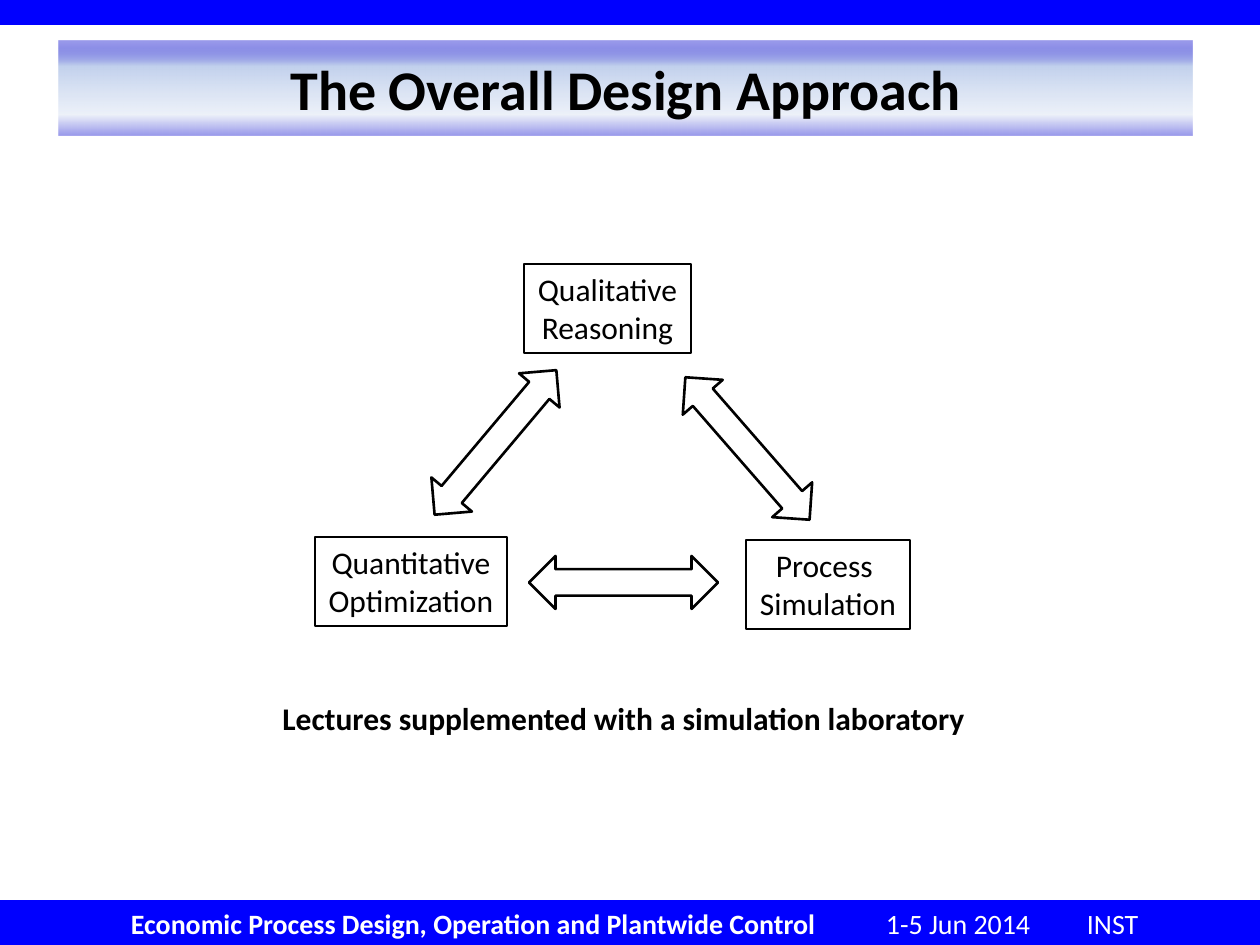
"""Build the design approach slide."""
from lxml import etree
from pptx import Presentation
from pptx.dml.color import RGBColor
from pptx.enum.shapes import MSO_SHAPE
from pptx.enum.text import MSO_ANCHOR, MSO_AUTO_SIZE, PP_ALIGN
from pptx.oxml import parse_xml
from pptx.oxml.ns import qn
from pptx.util import Pt

RECT, ARROW = MSO_SHAPE.RECTANGLE, MSO_SHAPE.UP_DOWN_ARROW
TOP, MIDDLE = MSO_ANCHOR.TOP, MSO_ANCHOR.MIDDLE
LEFT, CENTER = PP_ALIGN.LEFT, PP_ALIGN.CENTER
GROW = MSO_AUTO_SIZE.SHAPE_TO_FIT_TEXT
BLUE = RGBColor(0x00, 0x00, 0xFF)
BLACK = RGBColor(0x00, 0x00, 0x00)
WHITE = RGBColor(0xFF, 0xFF, 0xFF)
NAVY = RGBColor(0x00, 0x00, 0xCC)
SKY = RGBColor(0xC2, 0xD1, 0xED)
PALE = RGBColor(0xD2, 0xDD, 0xF1)
STOPS = [(1, NAVY, 39), (27, SKY, 100), (78, PALE, 40), (100, NAVY, 40)]
SPACE = "http://schemas.openxmlformats.org/drawingml/2006/main"


def emu(px):
    return round(px * 914400 / 126)


class Deck:
    def __init__(self, font):
        self.font = font
        self.prs = Presentation()
        self.prs.slide_width, self.prs.slide_height = emu(1260), emu(945)
        self.slide = self.prs.slides.add_slide(self.prs.slide_layouts[6])

    def shape(self, kind, area, fill=None, line=None):
        item = self.slide.shapes.add_shape(kind, *map(emu, area))
        item.shadow.inherit = False
        if fill is None:
            item.fill.background()
        else:
            item.fill.solid()
            item.fill.fore_color.rgb = fill
        if line is None:
            item.line.fill.background()
        else:
            item.line.color.rgb = BLACK
            item.line.width = Pt(line)
        return item

    def fill_text(self, item, text, size, color=BLACK, bold=False,
                  align=CENTER, anchor=TOP, wrap=True):
        frame = item.text_frame
        frame.text = text
        frame.word_wrap = wrap
        frame.vertical_anchor = anchor
        if not wrap:
            frame.auto_size = GROW
        for para in frame.paragraphs:
            para.alignment = align
            for run in para.runs:
                self.style(run, size, color, bold)
        return frame

    def style(self, run, size, color, bold):
        run.font.name = self.font
        run.font.size = Pt(size)
        run.font.bold = bold
        run.font.color.rgb = color

    def title(self, area, text):
        item = self.shape(RECT, area, NAVY)
        stops = "".join(
            f'<a:gs pos="{pos * 1000}"><a:srgbClr val="{color}">'
            f'<a:alpha val="{alpha * 1000}"/></a:srgbClr></a:gs>'
            for pos, color, alpha in STOPS)
        grad = parse_xml(
            f'<a:gradFill xmlns:a="{SPACE}" rotWithShape="1">'
            f'<a:gsLst>{stops}</a:gsLst>'
            '<a:lin ang="5400000" scaled="0"/></a:gradFill>')
        props = item.element.spPr
        props.replace(props.find(qn("a:solidFill")), grad)
        self.fill_text(item, text, 32, bold=True, anchor=MIDDLE)

    def footer(self, area, start, name, notes):
        item = self.shape(RECT, area, BLUE)
        frame = self.fill_text(item, name, 16, WHITE, True, LEFT)
        frame.margin_left = emu(start)
        para = frame.paragraphs[0]
        tabs = etree.SubElement(para._p.get_or_add_pPr(), qn("a:tabLst"))
        for left, text in notes:
            etree.SubElement(tabs, qn("a:tab"), pos=str(emu(left - start)),
                             algn="l")
            run = para.add_run()
            run.text = "\t" + text
            self.style(run, 16, WHITE, False)

    def box(self, area, text):
        item = self.shape(RECT, area, line=0.75)
        self.fill_text(item, text, 18, wrap=False)

    def arrow(self, left, top, angle):
        self.shape(ARROW, (left, top, 53, 189), line=1.5).rotation = angle

    def label(self, area, text):
        item = self.slide.shapes.add_textbox(*map(emu, area))
        frame = self.fill_text(item, text, 18, bold=True, align=LEFT,
                               wrap=False)
        frame.paragraphs[0].space_after = Pt(12)


def main():
    deck = Deck("Calibri")
    deck.shape(RECT, (0, 0, 1260, 25), BLUE)
    deck.footer((0, 900, 1260, 45), 131,
                "Economic Process Design, Operation and Plantwide Control",
                [(886, "1-5 Jun 2014"), (1087, "INST")])
    deck.title((59, 41, 1134, 95), "The Overall Design Approach")
    for left, top, width, text in [
            (524, 264, 167, "Qualitative\nReasoning"),
            (746, 540, 164, "Process \nSimulation"),
            (315, 537, 192, "Quantitative\nOptimization")]:
        deck.box((left, top, width, 89), text)
    for left, top, angle in [(721, 354, 318.9), (597, 488, 90),
                             (469, 348, 40.1)]:
        deck.arrow(left, top, angle)
    deck.label((270, 693, 713, 50),
               "Lectures supplemented with a simulation laboratory")
    deck.prs.save("out.pptx")


if __name__ == "__main__":
    main()
